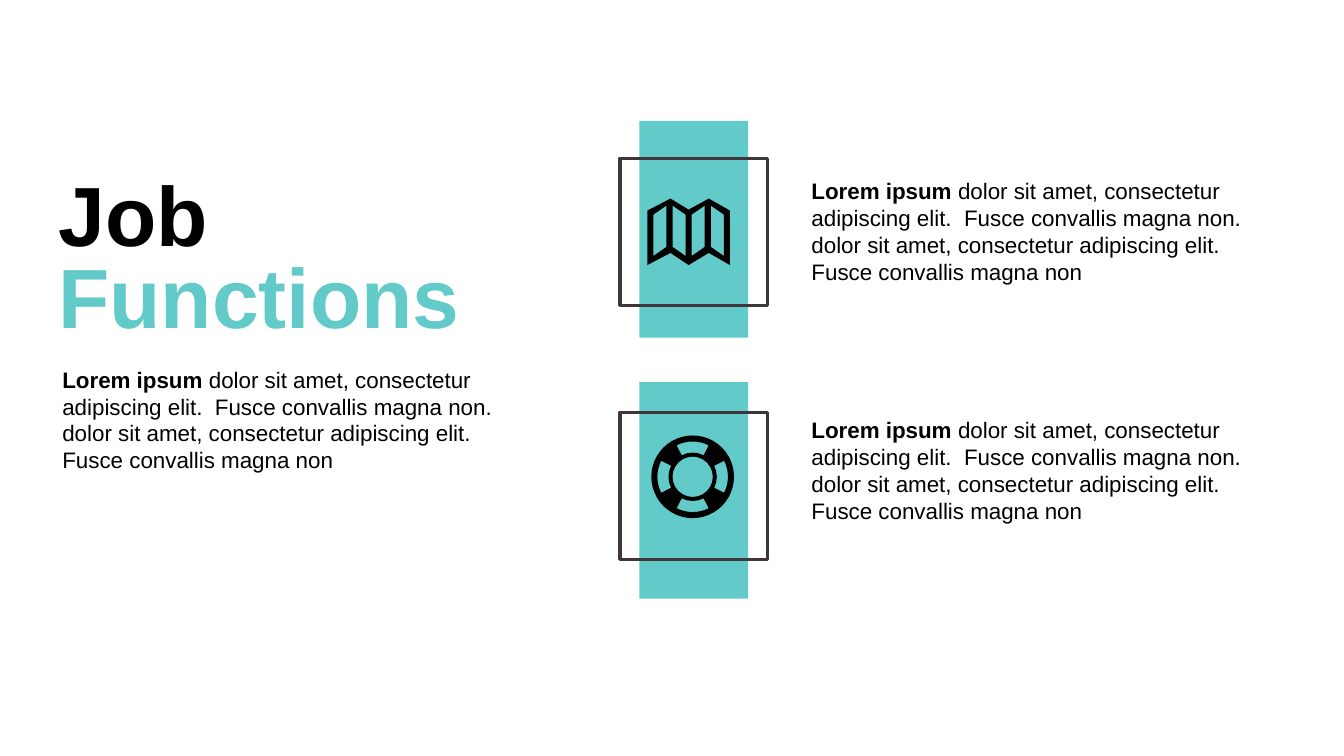
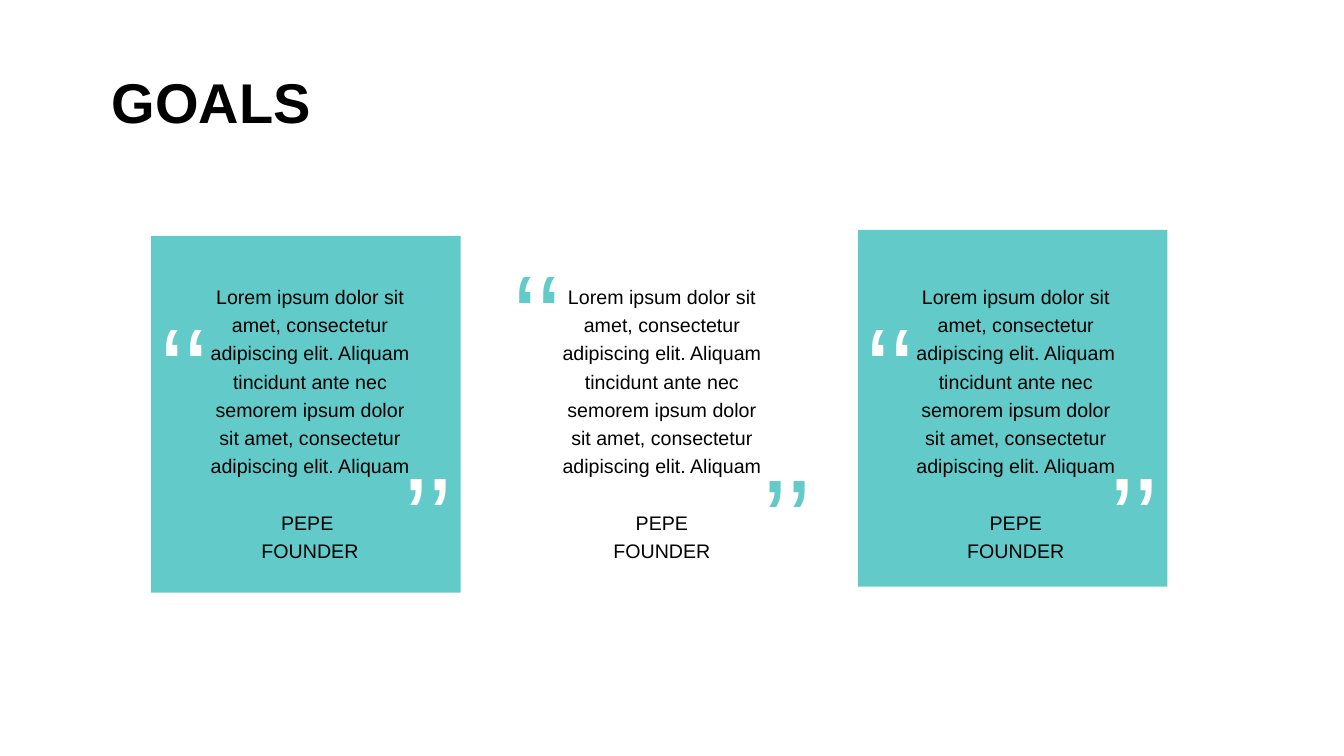
from dataclasses import dataclass
from math import cos, radians, sin

from lxml import etree
from pptx import Presentation
from pptx.dml.color import RGBColor as RGB
from pptx.enum.shapes import MSO_SHAPE as Kind
from pptx.enum.text import MSO_ANCHOR as Anchor, MSO_AUTO_SIZE as Auto, PP_ALIGN as Align
from pptx.oxml.ns import qn
from pptx.util import Inches, Pt


@dataclass(frozen=True)
class Theme:
    font: str = "Arial"
    ink: RGB = RGB(0, 0, 0)
    teal: RGB = RGB(0x62, 0xCA, 0xC9)
    white: RGB = RGB(255, 255, 255)
    frame: RGB = RGB(0x3F, 0x35, 0x3B)
    hero: int = 60
    head: int = 40
    body: int = 16
    quote: int = 14
    mark: int = 83
    edge: float = 2.25


LEAD = "Lorem ipsum "
REST = ("dolor sit amet, consectetur adipiscing elit.  Fusce convallis magna non. "
        "dolor sit amet, consectetur adipiscing elit. Fusce convallis magna non")
QUOTE = ("Lorem ipsum dolor sit amet, consectetur adipiscing elit. Aliquam tincidunt "
         "ante nec semorem ipsum dolor sit amet, consectetur adipiscing elit. Aliquam ")


def polar(mid, r, turn):
    """Point at an angle in degrees, clockwise from the right."""
    return mid[0] + r * cos(radians(turn)), mid[1] + r * sin(radians(turn))


def bend(shape, arcs):
    """Turn lines into arcs; each item is (radius, start, sweep), or None to stay straight."""
    for line, arc in zip(list(shape.element.iter(qn("a:lnTo"))), arcs):
        if arc is None:
            continue
        r, start, sweep = arc
        node = etree.Element(qn("a:arcTo"))
        for key, value in (("wR", Inches(r)), ("hR", Inches(r)),
                           ("stAng", start * 60000), ("swAng", sweep * 60000)):
            node.set(key, str(int(value)))
        line.getparent().replace(line, node)


class Deck:
    def __init__(self, theme):
        self.theme = theme
        self.prs = Presentation()
        self.prs.slide_width = Inches(13.33)
        self.prs.slide_height = Inches(7.5)
        self.slide = None

    def page(self):
        self.slide = self.prs.slides.add_slide(self.prs.slide_layouts[5])

    def style(self, run, size, color, bold=False):
        font = run.font
        font.name = self.theme.font
        font.size = Pt(size)
        font.bold = bold
        font.color.rgb = color

    def title(self, box, lines, size, pitch):
        """Fill the title with (text, color) lines set at a fixed pitch."""
        shape = self.slide.shapes.title
        shape.left, shape.top, shape.width, shape.height = map(Inches, box)
        frame = shape.text_frame
        frame.text = "\n".join(text for text, _ in lines)
        frame.auto_size = Auto.NONE
        frame.vertical_anchor = Anchor.TOP
        for para, (_, color) in zip(frame.paragraphs, lines):
            para.alignment = Align.LEFT
            para.line_spacing = Pt(pitch)
            self.style(para.runs[0], size, color, True)

    def text(self, box, text, size, color, align=Align.LEFT, pitch=1.0):
        shape = self.slide.shapes.add_textbox(*map(Inches, box))
        frame = shape.text_frame
        frame.word_wrap = True
        frame.text = text
        for para in frame.paragraphs:
            para.alignment = align
            para.line_spacing = pitch
            self.style(para.runs[0], size, color)
        return frame

    def blurb(self, x, y):
        """Body text with a bold lead."""
        look = self.theme
        para = self.text((x, y, 4.5, 1.18), LEAD, look.body, look.ink).paragraphs[0]
        para.runs[0].font.bold = True
        run = para.add_run()
        run.text = REST
        self.style(run, look.body, look.ink)

    def rect(self, box, fill=None, line=None):
        shape = self.slide.shapes.add_shape(Kind.RECTANGLE, *map(Inches, box))
        self.paint(shape, fill, line)

    def paint(self, shape, fill=None, line=None):
        shape.shadow.inherit = False
        if fill is None:
            shape.fill.background()
        else:
            shape.fill.solid()
            shape.fill.fore_color.rgb = fill
        if line is None:
            shape.line.fill.background()
        else:
            shape.line.color.rgb = line
            shape.line.width = Pt(self.theme.edge)

    def icon(self, loops):
        """One solid outline; every loop after the first is a hole."""
        loops = [[(Inches(x), Inches(y)) for x, y in loop] for loop in loops]
        pen = self.slide.shapes.build_freeform(*loops[0][0])
        for i, loop in enumerate(loops):
            if i:
                pen.move_to(*loop[0])
            pen.add_line_segments(loop[1:], close=True)
        shape = pen.convert_to_shape()
        self.paint(shape, self.theme.ink)
        return shape

    def map(self):
        xs = (6.42, 6.65, 6.83, 7.03, 7.24)
        tops = (2.09, 1.97, 2.08, 1.97, 2.09)
        ends = (2.63, 2.51, 2.63, 2.51, 2.63)
        loops = [list(zip(xs, tops)) + list(zip(xs, ends))[::-1]]
        for i in range(4):
            x = 6.48 + 0.19 * i
            a, b = (2.13, 2.04) if i % 2 == 0 else (2.04, 2.13)
            loops.append([(x, a), (x + 0.13, b), (x + 0.13, b + 0.41), (x, a + 0.41)])
        self.icon(loops)

    def buoy(self):
        mid, half = (6.87, 4.73), 27
        far, near = 0.35, 0.24
        loops, arcs = [], []
        for r in (0.41, 0.2):
            loops.append([polar(mid, r, a) for a in range(0, 361, 90)])
            # four quarter arcs, then the closing line that python-pptx leaves to a:close
            arcs += [(r, a, 90) for a in range(0, 360, 90)]
        for turn in range(0, 360, 90):
            a, b = turn - half, turn + half
            loops.append([polar(mid, far, a), polar(mid, far, b),
                          polar(mid, near, b), polar(mid, near, a)])
            arcs += [(far, a % 360, 2 * half), None, (near, b, -2 * half)]
        bend(self.icon(loops), arcs)

    def quote(self, x, name, marks, color):
        """Quote with its author; marks are (sign, left, top)."""
        look = self.theme
        frame = self.text((x, 2.73, 2.19, 2.9), f"{QUOTE}\n{name}\nFOUNDER",
                          look.quote, look.ink, Align.CENTER, 1.2)
        frame.paragraphs[1].space_before = Pt(20.2)
        for sign, left, top in marks:
            self.text((left, top, 0.98, 1.5), sign, look.mark, color, Align.CENTER)


def jobs(deck):
    look = deck.theme
    deck.page()
    deck.title((0.48, 1.76, 5.94, 1.73),
               [("Job", look.ink), ("Functions", look.teal)], look.hero, 58)
    deck.blurb(0.52, 3.58)
    for band, frame, text in ((1.2, 1.57, 1.71), (3.79, 4.09, 4.08)):
        deck.rect((6.34, band, 1.08, 2.15), fill=look.teal)
        deck.rect((6.15, frame, 1.46, 1.46), line=look.frame)
        deck.blurb(7.95, text)
    deck.map()
    deck.buoy()


def goals(deck):
    look = deck.theme
    deck.page()
    deck.title((1.01, 0.73, 7.87, 0.66), [("GOALS", look.ink)], look.head, 40)
    for x, y in ((1.5, 2.34), (8.51, 2.28)):
        deck.rect((x, y, 3.07, 3.54), fill=look.teal)
    for x, name, start, end, top, low, color in (
            (1.98, "PEPE ", 1.34, 3.76, 2.87, 4.35, look.white),
            (5.47, "PEPE", 4.84, 7.32, 2.35, 4.37, look.teal),
            (8.98, "PEPE", 8.34, 10.76, 2.87, 4.35, look.white)):
        deck.quote(x, name, (("‘‘", start, top), ("’’", end, low)), color)


def main():
    deck = Deck(Theme())
    jobs(deck)
    goals(deck)
    deck.prs.save("out.pptx")


if __name__ == "__main__":
    main()
